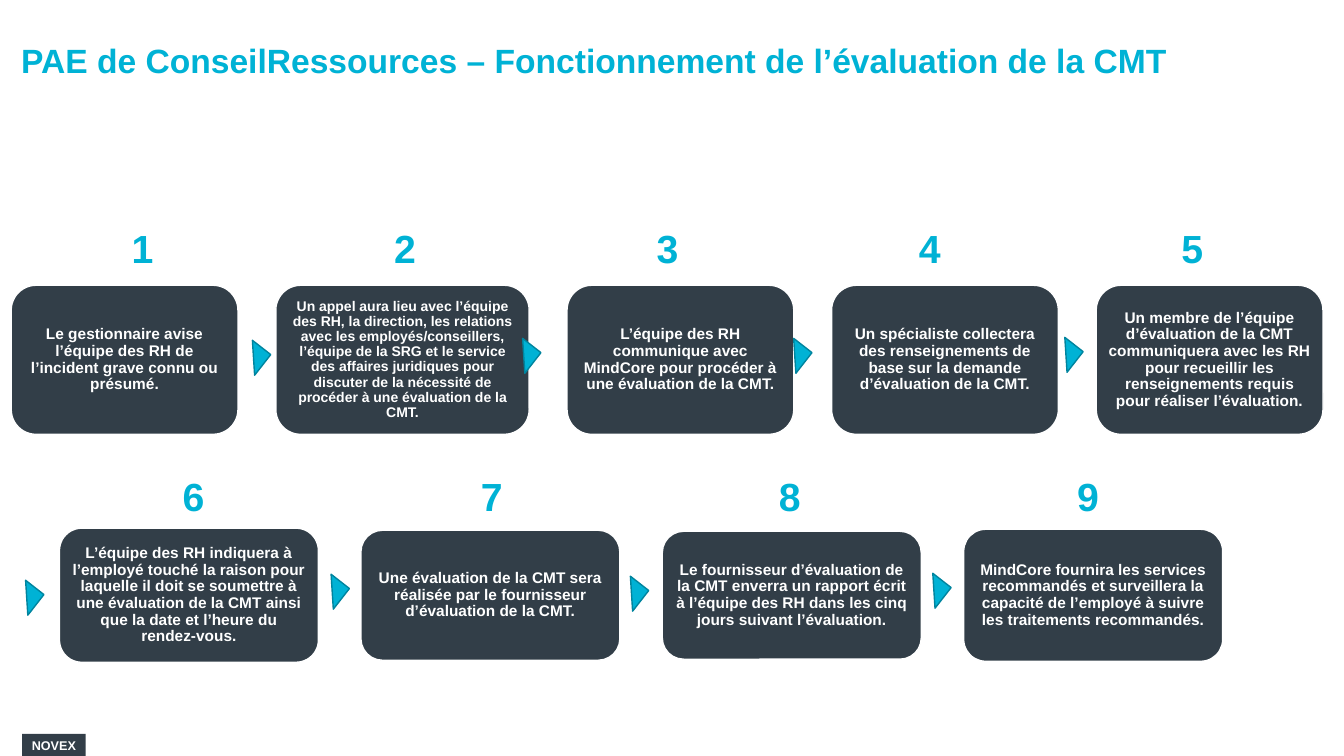
"""Build the slide that explains the nine steps of the CMT evaluation."""
from pptx import Presentation
from pptx.dml.color import RGBColor
from pptx.enum.shapes import MSO_SHAPE
from pptx.enum.text import MSO_ANCHOR, PP_ALIGN
from pptx.util import Pt

CYAN = RGBColor(0x00, 0xB2, 0xD5)
DARK_CYAN = RGBColor(0x00, 0x84, 0x9E)
SLATE = RGBColor(0x32, 0x3E, 0x48)
WHITE = RGBColor(0xFF, 0xFF, 0xFF)
PLAIN_TABLE = "{2D5ABB26-0587-4C30-8999-92F81FD0307C}"


def write(frame, text, size, color, align, anchor, margins):
    sides = ("margin_left", "margin_top", "margin_right", "margin_bottom")
    layout = {"word_wrap": True, "vertical_anchor": anchor}
    layout.update(zip(sides, map(Pt, margins)))
    for name, value in layout.items():
        setattr(frame, name, value)
    para = frame.paragraphs[0]
    para.alignment = align
    span = para.add_run()
    span.text = text
    for name, value in {"name": "Arial", "size": Pt(size), "bold": True}.items():
        setattr(span.font, name, value)
    span.font.color.rgb = color
    return para


def add_block(page, kind, left, top, width, height, fill, line):
    shape = page.shapes.add_shape(kind, Pt(left), Pt(top), Pt(width), Pt(height))
    shape.shadow.inherit = False
    shape.fill.solid()
    shape.fill.fore_color.rgb = fill
    shape.line.color.rgb = line
    shape.line.width = Pt(1)
    return shape


ROWS = [
    {
        "left": 8, "middle": 257, "gap": 27,
        "table": (8, 159, 937.5), "first": 1,
        "steps": [
            ("Le gestionnaire avise l’équipe des RH de l’incident grave connu ou présumé.", 162, 106.5, 11),
            ("Un appel aura lieu avec l’équipe des RH, la direction, les relations avec les "
             "employés/conseillers, l’équipe de la SRG et le service des affaires juridiques pour "
             "discuter de la nécessité de procéder à une évaluation de la CMT.", 181, 106.5, 10),
            ("L’équipe des RH communique avec MindCore pour procéder à une évaluation de la CMT.", 162, 106.5, 11),
            ("Un spécialiste collectera des renseignements de base sur la demande d’évaluation "
             "de la CMT.", 162, 106.5, 11),
            ("Un membre de l’équipe d’évaluation de la CMT communiquera avec les RH pour "
             "recueillir les renseignements requis pour réaliser l’évaluation.", 162, 106.5, 11),
        ],
        "arrows": [(172.8, 246.2), (365.8, 244.8), (559.4, 244.8), (753.1, 244.1)],
    },
    {
        "left": 42.5, "middle": 425.2, "gap": 30.3,
        "table": (31.7, 336.2, 852), "first": 6,
        "steps": [
            ("L’équipe des RH indiquera à l’employé touché la raison pour laquelle il doit se "
             "soumettre à une évaluation de la CMT ainsi que la date et l’heure du rendez-vous.", 185, 95.8, 11),
            ("Une évaluation de la CMT sera réalisée par le fournisseur d’évaluation de la CMT.", 185, 92.9, 11),
            ("Le fournisseur d’évaluation de la CMT enverra un rapport écrit à l’équipe des RH "
             "dans les cinq jours suivant l’évaluation.", 185, 91.4, 11),
            ("MindCore fournira les services recommandés et surveillera la capacité de l’employé "
             "à suivre les traitements recommandés.", 185, 94.3, 11),
        ],
        "arrows": [(10.8, 417.6), (229, 413.3), (442.8, 414.7), (658.8, 412.6)],
    },
]

deck = Presentation()
deck.slide_width, deck.slide_height = Pt(960), Pt(540)
page = deck.slides.add_slide(deck.slide_layouts[5])

title = page.shapes.title
frame_place = {"left": 15.1, "top": 28.8, "width": 929.5, "height": 62.6}
for name, value in frame_place.items():
    setattr(title, name, Pt(value))
write(title.text_frame, "PAE de ConseilRessources – Fonctionnement de l’évaluation de la CMT",
      24, CYAN, PP_ALIGN.LEFT, MSO_ANCHOR.TOP, (0, 0, 0, 0))

footer = add_block(page, MSO_SHAPE.RECTANGLE, 15.8, 524.2, 45.4, 16.6, SLATE, SLATE)
footer.line.fill.background()
write(footer.text_frame, "NOVEX", 9, WHITE, PP_ALIGN.CENTER, MSO_ANCHOR.MIDDLE, (5.8, 2.9, 5.8, 2.9))
footer.text_frame.word_wrap = False

for row in ROWS:
    left = row["left"]
    for text, width, height, size in row["steps"]:
        box = add_block(page, MSO_SHAPE.ROUNDED_RECTANGLE, left, row["middle"] - height / 2,
                        width, height, SLATE, WHITE)
        inset = size / 3
        para = write(box.text_frame, text, size, WHITE, PP_ALIGN.CENTER, MSO_ANCHOR.MIDDLE, [inset] * 4)
        para.line_spacing = 0.9
        left += width + row["gap"]

    table_left, table_top, table_width = row["table"]
    count = len(row["steps"])
    table = page.shapes.add_table(1, count, Pt(table_left), Pt(table_top),
                                  Pt(table_width), Pt(47.5)).table
    table._tbl.tblPr[0].text = PLAIN_TABLE
    table.first_row = table.horz_banding = False
    for index in range(count):
        table.columns[index].width = Pt(table_width / count)
        cell = table.cell(0, index)
        cell.fill.background()
        para = cell.text_frame.paragraphs[0]
        para.alignment = PP_ALIGN.CENTER
        span = para.add_run()
        span.text = str(row["first"] + index)
        for name, value in {"name": "Arial", "size": Pt(28), "bold": True}.items():
            setattr(span.font, name, value)
        span.font.color.rgb = CYAN

    for arrow_left, arrow_top in row["arrows"]:
        arrow = add_block(page, MSO_SHAPE.RIGHT_TRIANGLE, arrow_left, arrow_top,
                          16.6, 18.7, CYAN, DARK_CYAN)
        arrow.rotation = 218

deck.save("out.pptx")
